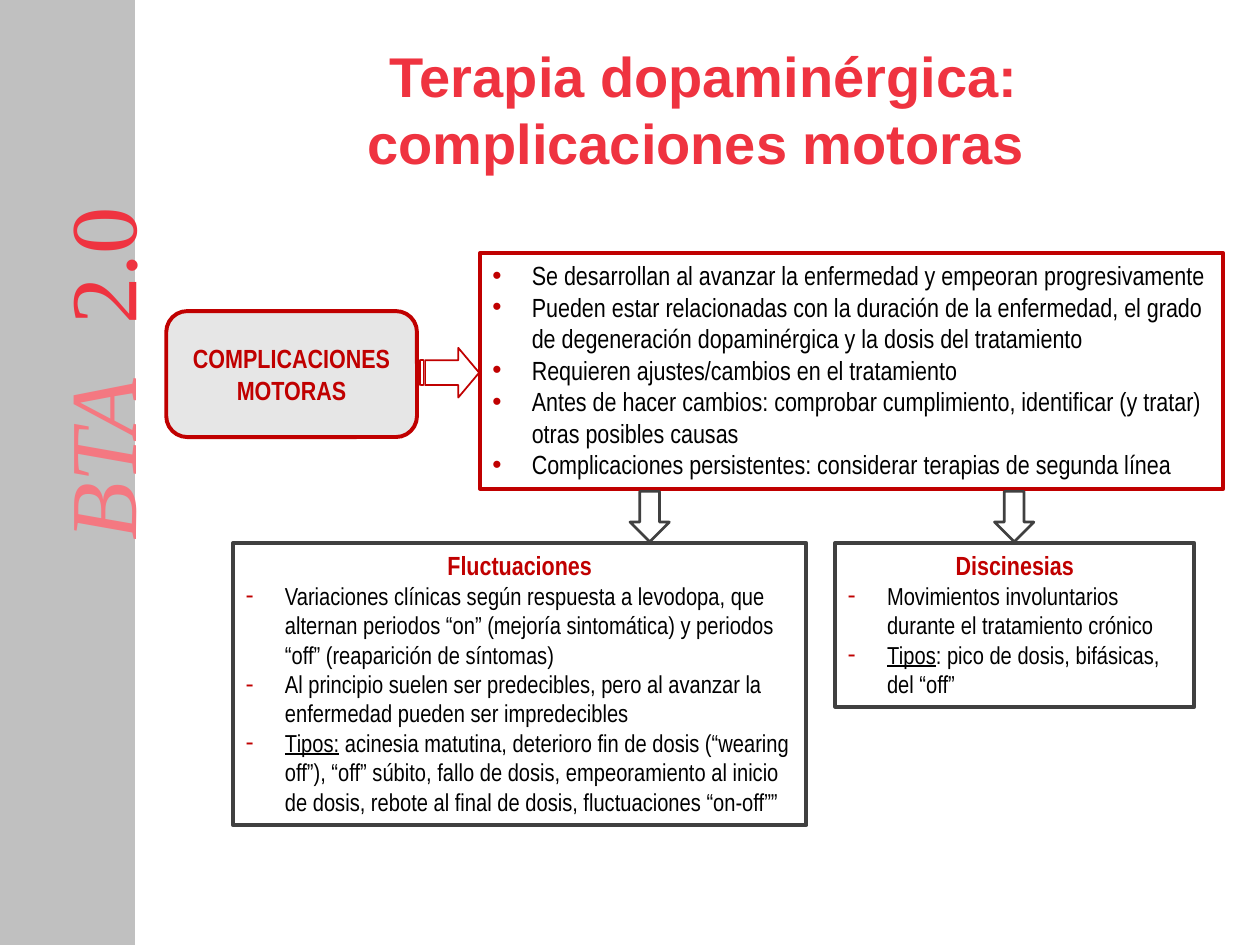
from lxml.etree import SubElement
from pptx import Presentation
from pptx.dml.color import RGBColor
from pptx.enum.shapes import MSO_SHAPE as Preset
from pptx.enum.text import MSO_ANCHOR as Anchor, PP_ALIGN as Align
from pptx.oxml.ns import qn
from pptx.util import Pt

COLORS = {
    "sidebar": "C0C0C0",
    "brand": "EF3340",
    "brand_light": "F47881",
    "accent": "C00000",
    "dark": "404040",
    "panel": "E6E6E6",
    "text": "000000",
}
NARROW = "Arial Narrow"
INDENT = 22.5

FEATURES = [
    ("", "Se desarrollan al avanzar la enfermedad y empeoran progresivamente"),
    ("", "Pueden estar relacionadas con la duración de la enfermedad, el grado "
         "de degeneración dopaminérgica y la dosis del tratamiento"),
    ("", "Requieren ajustes/cambios en el tratamiento"),
    ("", "Antes de hacer cambios: comprobar cumplimiento, identificar (y tratar) "
         "otras posibles causas"),
    ("", "Complicaciones persistentes: considerar terapias de segunda línea"),
]
FLUCTUATIONS = [
    ("", "Variaciones clínicas según respuesta a levodopa, que alternan periodos "
         "“on” (mejoría sintomática) y periodos “off” (reaparición de síntomas)"),
    ("", "Al principio suelen ser predecibles, pero al avanzar la enfermedad "
         "pueden ser impredecibles"),
    ("Tipos:", " acinesia matutina, deterioro fin de dosis (“wearing off”), “off” "
               "súbito, fallo de dosis, empeoramiento al inicio de dosis, rebote "
               "al final de dosis, fluctuaciones “on-off””"),
]
DYSKINESIAS = [
    ("", "Movimientos involuntarios durante el tratamiento crónico"),
    ("Tipos", ": pico de dosis, bifásicas, del “off”"),
]


def rgb(name):
    return RGBColor.from_string(COLORS[name])


def style(font, name, size, color, bold=False, italic=False):
    font.name = name
    font.size = Pt(size)
    font.color.rgb = rgb(color)
    font.bold = bold
    font.italic = italic


def add_shape(slide, preset, box, line, width, fill=None):
    shape = slide.shapes.add_shape(preset, *map(Pt, box))
    shape.shadow.inherit = False
    if fill:
        shape.fill.solid()
        shape.fill.fore_color.rgb = rgb(fill)
    else:
        shape.fill.background()
    shape.line.color.rgb = rgb(line)
    shape.line.width = Pt(width)
    shape.text_frame.word_wrap = True
    shape.text_frame.vertical_anchor = Anchor.TOP
    return shape


def write_heading(paragraph, text, name=NARROW, size=15, color="accent"):
    paragraph.text = text
    paragraph.alignment = Align.CENTER
    style(paragraph.runs[0].font, name, size, color, bold=True)


def write_bullet(paragraph, item, mark, size):
    properties = paragraph._p.get_or_add_pPr()
    properties.set("marL", str(Pt(INDENT)))
    properties.set("indent", str(-Pt(INDENT)))
    color = SubElement(properties, qn("a:buClr"))
    SubElement(color, qn("a:srgbClr"), val=COLORS["accent"])
    SubElement(properties, qn("a:buFont"), typeface="Arial")
    SubElement(properties, qn("a:buChar"), char=mark)
    paragraph.alignment = Align.LEFT
    underlined, plain = item
    for text, underline in ((underlined, True), (plain, False)):
        if text:
            run = paragraph.add_run()
            run.text = text
            style(run.font, NARROW, size, "text")
            run.font.underline = underline


def add_list_box(slide, box, line, items, mark, size, heading=None):
    frame = add_shape(slide, Preset.RECTANGLE, box, line, 2.25).text_frame
    if heading:
        write_heading(frame.paragraphs[0], heading)
    for index, item in enumerate(items):
        first = index == 0 and not heading
        paragraph = frame.paragraphs[0] if first else frame.add_paragraph()
        write_bullet(paragraph, item, mark, size)


def add_sidebar(slide):
    add_shape(slide, Preset.RECTANGLE, (0, 0, 77, 540), "sidebar", 0.75, "sidebar")
    label = slide.shapes.add_textbox(Pt(-55.5), Pt(152.6), Pt(232.6), Pt(93.6))
    label.rotation = 270
    frame = label.text_frame
    frame.word_wrap = True
    frame.margin_top = Pt(10)
    paragraph = frame.paragraphs[0]
    tabs = SubElement(paragraph._p.get_or_add_pPr(), qn("a:tabLst"))
    SubElement(tabs, qn("a:tab"), pos=str(Pt(123)), algn="l")
    for text, color, italic in (("BTA\t", "brand_light", True), ("2.0", "brand", False)):
        run = paragraph.add_run()
        run.text = text
        style(run.font, "Times New Roman", 54, color, italic=italic)


def add_title(slide):
    title = slide.shapes.add_textbox(Pt(113.8), Pt(16.6), Pt(576.7), Pt(100))
    frame = title.text_frame
    frame.word_wrap = True
    frame.margin_top = Pt(7.2)
    text = "Terapia dopaminérgica: complicaciones motoras "
    write_heading(frame.paragraphs[0], text, "Arial", 32, "brand")


def add_topic(slide):
    box = (95, 177.8, 143.3, 72)
    topic = add_shape(slide, Preset.ROUNDED_RECTANGLE, box, "accent", 2.25, "panel")
    topic.text_frame.vertical_anchor = Anchor.MIDDLE
    write_heading(topic.text_frame.paragraphs[0], "COMPLICACIONES MOTORAS")
    arrow = add_shape(slide, Preset.STRIPED_RIGHT_ARROW, (238.5, 198.8, 35.3, 28.4), "accent", 1)
    arrow.adjustments[0] = 0.5
    arrow.adjustments[1] = 0.42


def main():
    presentation = Presentation()
    presentation.slide_width = Pt(720)
    presentation.slide_height = Pt(540)
    slide = presentation.slides.add_slide(presentation.slide_layouts[6])
    add_sidebar(slide)
    add_title(slide)
    add_list_box(slide, (274.3, 144.7, 424.8, 134.6), "accent", FEATURES, "•", 15)
    add_list_box(slide, (133.2, 310.3, 327.6, 161.3), "dark", FLUCTUATIONS, "-", 14,
                 "Fluctuaciones")
    add_list_box(slide, (477.3, 310.3, 205.2, 93.6), "dark", DYSKINESIAS, "-", 14,
                 "Discinesias")
    for left in (360, 568.3):
        add_shape(slide, Preset.DOWN_ARROW, (left, 280.8, 22.5, 28.8), "dark", 1.5)
    add_topic(slide)
    presentation.save("out.pptx")


if __name__ == "__main__":
    main()
